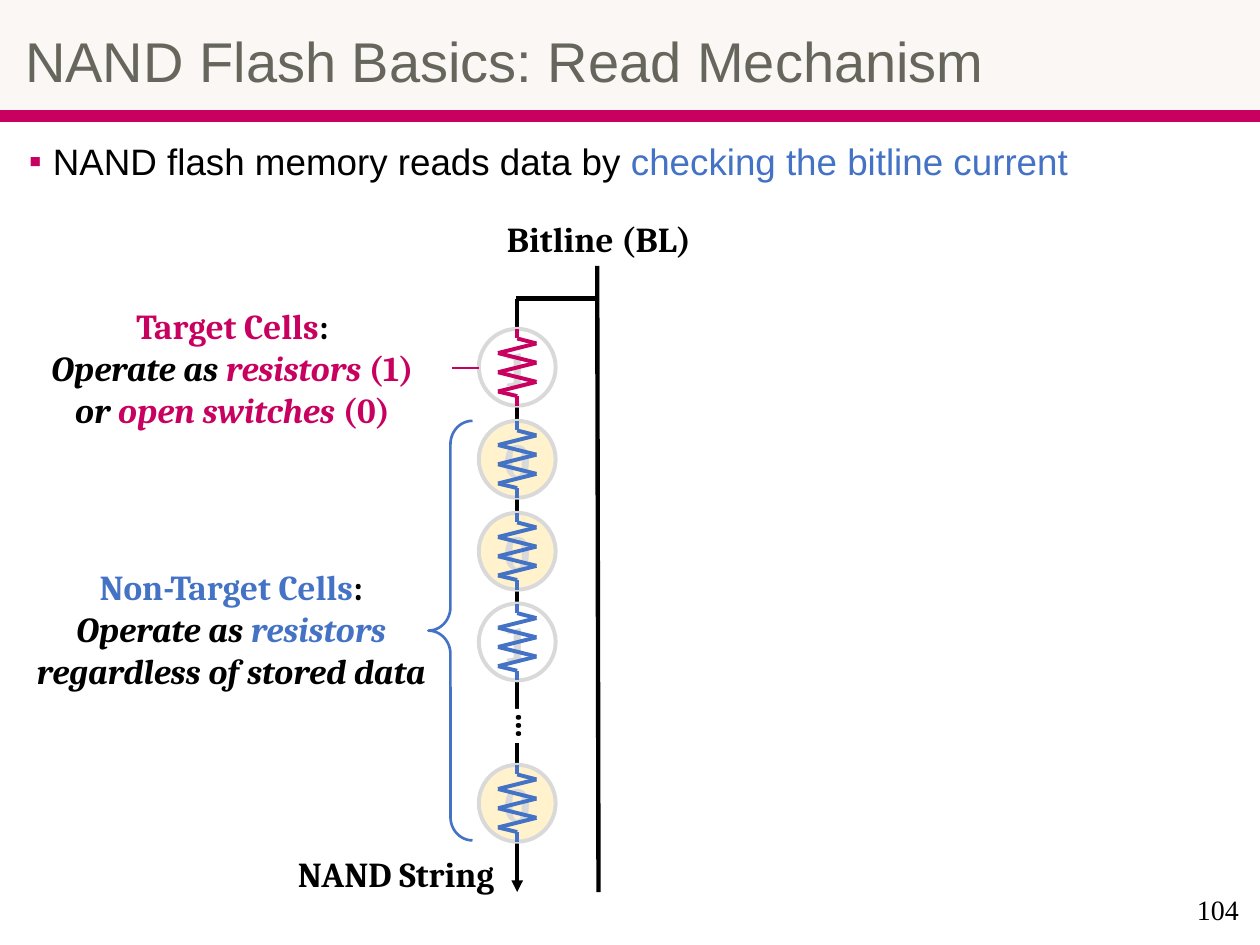
from dataclasses import dataclass
from itertools import pairwise

from lxml import etree
from pptx import Presentation
from pptx.dml.color import RGBColor
from pptx.enum.shapes import MSO_CONNECTOR, MSO_SHAPE
from pptx.enum.text import MSO_ANCHOR, MSO_AUTO_SIZE, PP_ALIGN
from pptx.oxml.ns import qn
from pptx.util import Inches, Pt

LINE = MSO_CONNECTOR.STRAIGHT
RECT, OVAL, BRACE = MSO_SHAPE.RECTANGLE, MSO_SHAPE.OVAL, MSO_SHAPE.LEFT_BRACE
MIDDLE = MSO_ANCHOR.MIDDLE
LEFT, CENTER, RIGHT = PP_ALIGN.LEFT, PP_ALIGN.CENTER, PP_ALIGN.RIGHT


@dataclass(frozen=True)
class Theme:
    sans: str = "Arial"
    serif: str = "Cambria"
    page: str = "Times New Roman"
    ink: str = "000000"
    white: str = "FFFFFF"
    pink: str = "C80060"
    blue: str = "4472C4"
    cream: str = "FAF7F5"
    gray: str = "66665C"
    pale: str = "D9D9D9"
    gold: str = "FFF2CC"
    head: int = 32
    bit: int = 28
    body: int = 21
    label: int = 20
    num: int = 16
    thin: float = 1.5
    wire: float = 2.25
    thick: float = 2.5


T = Theme()


def rgb(code):
    return RGBColor.from_string(code)


def place(shape, box):
    shape.left, shape.top, shape.width, shape.height = map(Inches, box)


def style(shape, fill=None, line=None, width=T.wire):
    shape.shadow.inherit = False
    if fill:
        shape.fill.solid()
        shape.fill.fore_color.rgb = rgb(fill)
    else:
        shape.fill.background()
    if line:
        shape.line.color.rgb = rgb(line)
        shape.line.width = Pt(width)
    else:
        shape.line.fill.background()


def draw(shapes, kind, box, fill=None, line=None, width=T.wire):
    shape = shapes.add_shape(kind, *map(Inches, box))
    style(shape, fill, line, width)
    return shape


def wire(shapes, start, end, color=T.ink, width=T.wire, arrow=False):
    link = shapes.add_connector(LINE, *map(Inches, (*start, *end)))
    link.line.color.rgb = rgb(color)
    link.line.width = Pt(width)
    props = link.element.spPr
    if arrow:
        etree.SubElement(props.find(qn("a:ln")), qn("a:tailEnd"), type="triangle")
    etree.SubElement(props, qn("a:effectLst"))


def write(para, parts, font, size, bold=False, align=CENTER):
    """Add runs given as (text, color, italic); a newline ends a line."""
    para.alignment = align
    for text, color, slant in parts:
        run = para.add_run()
        run.text = text.rstrip("\n")
        run.font.name, run.font.size = font, Pt(size)
        run.font.bold, run.font.italic = bold, slant
        run.font.color.rgb = rgb(color)
        if text.endswith("\n"):
            para.add_line_break()


def inset(frame, left=0, top=0, right=0, bottom=0):
    frame.margin_left, frame.margin_top = Inches(left), Inches(top)
    frame.margin_right, frame.margin_bottom = Inches(right), Inches(bottom)
    frame.vertical_anchor = MIDDLE
    frame.word_wrap = True


def label(shapes, box, *rows):
    frame = shapes.add_textbox(*map(Inches, box)).text_frame
    inset(frame)
    for i, parts in enumerate(rows):
        para = frame.add_paragraph() if i else frame.paragraphs[0]
        write(para, parts, T.serif, T.label, True)


def header(slide, box):
    x, y, w, h = box
    draw(slide.shapes, RECT, (x, y + h + 0.01, w, 0.08), T.pink, T.pink, 1)
    title = slide.shapes.title
    place(title, box)
    title.fill.solid()
    title.fill.fore_color.rgb = rgb(T.cream)
    title.line.color.rgb = rgb(T.cream)
    title.line.width = Pt(0.75)
    frame = title.text_frame
    inset(frame, 0.2, 0.2, 0.1, 0.05)
    frame.auto_size = MSO_AUTO_SIZE.NONE
    para = frame.paragraphs[0]
    para.line_spacing = 0.9
    write(para, [("NAND Flash Basics: Read Mechanism", T.gray, False)],
          T.sans, T.head, align=LEFT)


def points(slide, box):
    body = slide.placeholders[1]
    place(body, box)
    body.text_frame.auto_size = MSO_AUTO_SIZE.NONE
    para = body.text_frame.paragraphs[0]
    props = para._p.get_or_add_pPr()
    props.set("marL", str(Inches(0.19)))
    props.set("indent", str(-Inches(0.19)))
    tint = etree.SubElement(props, qn("a:buClr"))
    etree.SubElement(tint, qn("a:srgbClr"), val=T.pink)
    etree.SubElement(props, qn("a:buFont"), typeface=T.sans)
    etree.SubElement(props, qn("a:buChar"), char="▪")
    para.line_spacing, para.space_before = 0.9, Pt(0)
    write(para, [("NAND flash memory reads data by ", T.ink, False),
                 ("checking the bitline current", T.blue, False)],
          T.sans, T.body, align=LEFT)


def cell(shapes, box, bit):
    disc = draw(shapes, OVAL, box, T.white if bit == "1" else T.gold, T.pale)
    inset(disc.text_frame)
    write(disc.text_frame.paragraphs[0], [(bit, T.pale, False)],
          T.serif, T.bit, True)


def coil(shapes, box, color):
    """Draw a resistor down the middle of the box."""
    x, y, w, h = box
    mid, amp = x + w / 2, w / 4
    zig = [(mid + amp * (-1) ** i, y + h * (0.19 + i / 8)) for i in range(6)]
    path = [(mid, y), (mid, y + h / 8), *zig,
            (mid, y + h * 7 / 8), (mid, y + h)]
    group = shapes.add_group_shape()
    for start, end in pairwise(path):
        wire(group.shapes, start, end, color)


def string(slide, box):
    """Draw the bitline and the chain of cells that hangs from it."""
    x, y, w, h = box
    shapes = slide.shapes
    side = 0.61
    mid, right, foot = x + side / 2, x + w, y + h
    joint = y + 0.26
    wire(shapes, (mid, joint), (mid, foot), arrow=True)
    cells = [((x, y + gap, side, side), bit) for gap, bit in
             zip((0.5, 1.23, 1.96, 2.68, 3.96), "10010")]
    for spot, bit in cells:
        cell(shapes, spot, bit)
    wire(shapes, (mid - 0.01, joint), (right, joint), width=T.thick)
    wire(shapes, (right, foot), (right - 0.01, y), width=T.thick)
    for i, (spot, _) in enumerate(cells):
        coil(shapes, spot, T.blue if i else T.pink)
    dots = draw(shapes, RECT, (x + 0.09, y + 3.48, 0.27, 0.34), T.white)
    dots.rotation = 270
    inset(dots.text_frame)
    write(dots.text_frame.paragraphs[0], [("…", T.ink, False)],
          T.serif, T.label, True)
    label(shapes, (x - 0.68, y - 0.39, 3.27, 0.34),
          [("Bitline (BL)", T.ink, False)])
    label(shapes, (x - 2.29, foot - 0.32, 3.27, 0.34),
          [("NAND String", T.ink, False)])


def notes(slide, box):
    """Explain the target cell and the others, left of the string."""
    x, y, w, h = box
    shapes = slide.shapes
    label(shapes, (x + 0.06, y, 3.49, 1.01),
          [("Target Cells", T.pink, False), (":", T.ink, False)],
          [("Operate as ", T.ink, True), ("resistors ", T.pink, True),
           ("(1)\n", T.pink, False), ("or ", T.ink, True),
           ("open switches ", T.pink, True), ("(0)", T.pink, False)])
    wire(shapes, (x + w - 0.21, y + 0.51), (x + w, y + 0.51), T.pink, T.thin)
    label(shapes, (x, y + 2.07, 3.59, 1.01),
          [("Non-Target Cells", T.blue, False), (":", T.ink, False)],
          [("Operate as ", T.ink, True), ("resistors\n", T.blue, True),
           ("regardless of stored data", T.ink, True)])
    brace = draw(shapes, BRACE, (x + w - 0.4, y + 0.93, 0.35, h - 0.93),
                 line=T.blue, width=T.thin)
    brace.adjustments[0] = 0.53


def number(slide, box):
    frame = slide.shapes.add_textbox(*map(Inches, box)).text_frame
    frame.vertical_anchor = MIDDLE
    frame.word_wrap = True
    write(frame.paragraphs[0], [("104", T.ink, False)],
          T.page, T.num, align=RIGHT)


def main():
    deck = Presentation()
    deck.slide_width, deck.slide_height = Inches(10), Inches(7.5)
    slide = deck.slides.add_slide(deck.slide_layouts[1])
    header(slide, (0, 0, 10, 0.87))
    points(slide, (0.13, 1.09, 9.74, 5.99))
    string(slide, (3.8, 2.11, 0.95, 4.97))
    notes(slide, (0.04, 2.41, 3.76, 4.26))
    number(slide, (7.6, 6.97, 2.33, 0.5))
    deck.save("out.pptx")


if __name__ == "__main__":
    main()
